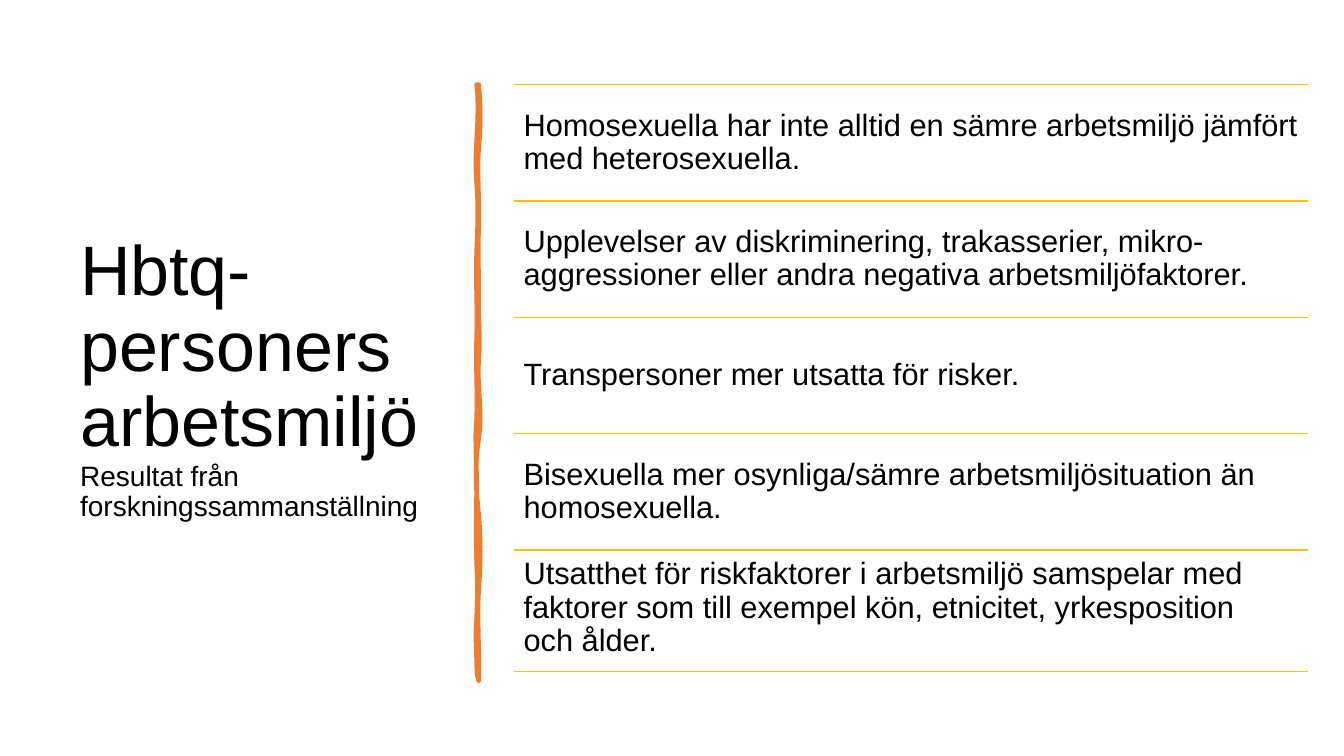
from dataclasses import dataclass

from lxml import etree
from pptx import Presentation
from pptx.dml.color import RGBColor
from pptx.enum.shapes import MSO_CONNECTOR
from pptx.enum.text import MSO_ANCHOR, MSO_AUTO_SIZE, PP_ALIGN
from pptx.oxml.ns import qn
from pptx.util import Pt

LEFT = PP_ALIGN.LEFT
MIDDLE = MSO_ANCHOR.MIDDLE
FIXED = MSO_AUTO_SIZE.NONE
STRAIGHT = MSO_CONNECTOR.STRAIGHT


@dataclass(frozen=True)
class Theme:
    """Colours, font and type sizes of the slide."""
    font: str = "Arial"
    ink: RGBColor = RGBColor(0x00, 0x00, 0x00)
    brush: RGBColor = RGBColor(0xED, 0x7D, 0x31)
    rule: RGBColor = RGBColor(0xFF, 0xC0, 0x00)
    head: int = 50
    sub: int = 20
    body: int = 22


THEME = Theme()

ROWS = [
    "Homosexuella har inte alltid en sämre arbetsmiljö jämfört med heterosexuella.",
    "Upplevelser av diskriminering, trakasserier, mikro-aggressioner "
    "eller andra negativa arbetsmiljöfaktorer.",
    "Transpersoner mer utsatta för risker.",
    "Bisexuella mer osynliga/sämre arbetsmiljösituation än homosexuella.",
    "Utsatthet för riskfaktorer i arbetsmiljö samspelar med faktorer "
    "som till exempel kön, etnicitet, yrkesposition \voch ålder.",
]

DOWN = [(45, 1.4, 1.4), (102, -1.4, 0.7), (151, -0.7, 0), (196, -0.7, 1.4),
        (253, -1.4, 2.9), (307, -2.9, -2.2), (360, 1.4, 1.4), (426, -1.4, 0.7)]
UP = [(381, 0.7, -1.4), (341, 0.7, 0.7), (283, -0.7, 0), (239, 0, -1.4),
      (181, 0.7, -0.7), (120, 0.7, -0.7), (70, 0.7, 1.4), (0, -2.2, 2.9)]


def style(item, form):
    """Set each attribute of the item from a dict of format values."""
    for name, value in form.items():
        setattr(item, name, value)


def type_in(para, size):
    """Give every run of a paragraph the theme's font at one size."""
    for run in para.runs:
        style(run.font, {"name": THEME.font, "size": Pt(size)})
        run.font.color.rgb = THEME.ink


def head(slide, box, title, note):
    """Place the title and its smaller note in the title placeholder."""
    x, y, w, h = box
    shape = slide.shapes.title
    style(shape, {"left": Pt(x), "top": Pt(y), "width": Pt(w), "height": Pt(h)})
    frame = shape.text_frame
    style(frame, {"word_wrap": True, "auto_size": FIXED, "vertical_anchor": MIDDLE})
    para = frame.paragraphs[0]
    style(para, {"alignment": LEFT, "line_spacing": 0.9})
    para.add_run().text = title
    para.add_line_break()
    para.add_run().text = note
    type_in(para, THEME.head)
    para.runs[-1].font.size = Pt(THEME.sub)


def edge(x, y, spans, steps=8):
    """Return points along a chain of upright curves with sideways bends."""
    points = []
    for end, first, last in spans:
        for i in range(1, steps + 1):
            t = i / steps
            bend = 3 * t * (1 - t) * (first * (1 - t) + last * t)
            points.append((x + bend, y + (end - y) * t))
        y = end
    return points


def stroke(slide, box):
    """Draw the upright brush stroke in the box."""
    x, y, w, h = box
    points = edge(w, 0, DOWN) + edge(0, h, UP)
    pen = slide.shapes.build_freeform(Pt(x + w), Pt(y))
    pen.add_line_segments([(Pt(x + a), Pt(y + b)) for a, b in points])
    shape = pen.convert_to_shape()
    shape.shadow.inherit = False
    shape.fill.solid()
    shape.fill.fore_color.rgb = THEME.brush
    shape.line.color.rgb = THEME.brush
    shape.line.width = Pt(3.25)
    etree.SubElement(shape.element.spPr.find(qn("a:ln")), qn("a:round"))


def rule(slide, x, y, w, weight=1):
    """Draw one level rule."""
    line = slide.shapes.add_connector(STRAIGHT, Pt(x), Pt(y), Pt(x + w), Pt(y))
    line.line.color.rgb = THEME.rule
    line.line.width = Pt(weight)
    etree.SubElement(line.element.spPr, qn("a:effectLst"))


def points(slide, box, rows):
    """Stack the rows evenly in the box, each one under a rule."""
    x, y, w, h = box
    step = h / len(rows)
    pad = Pt(6.5)
    for i, text in enumerate(rows):
        top = y + i * step
        rule(slide, x, top, w)
        frame = slide.shapes.add_textbox(Pt(x), Pt(top), Pt(w), Pt(step)).text_frame
        style(frame, {"word_wrap": True, "auto_size": FIXED,
                      "vertical_anchor": MIDDLE, "margin_left": pad,
                      "margin_right": pad, "margin_top": pad, "margin_bottom": pad})
        frame.text = text
        para = frame.paragraphs[0]
        style(para, {"alignment": LEFT, "line_spacing": 0.9})
        type_in(para, THEME.body)
    rule(slide, x, y + h + 3.5, w, 0.75)


def main():
    """Build and save the slide."""
    deck = Presentation()
    style(deck, {"slide_width": Pt(960), "slide_height": Pt(540)})
    slide = deck.slides.add_slide(deck.slide_layouts[5])
    head(slide, (50, 50.5, 269, 440), "Hbtq-personers arbetsmiljö",
         "Resultat från forskningssammanställning")
    stroke(slide, (340.5, 60.5, 1.5, 426))
    points(slide, (367.5, 60.5, 567, 415.5), ROWS)
    deck.save("out.pptx")


if __name__ == "__main__":
    main()
